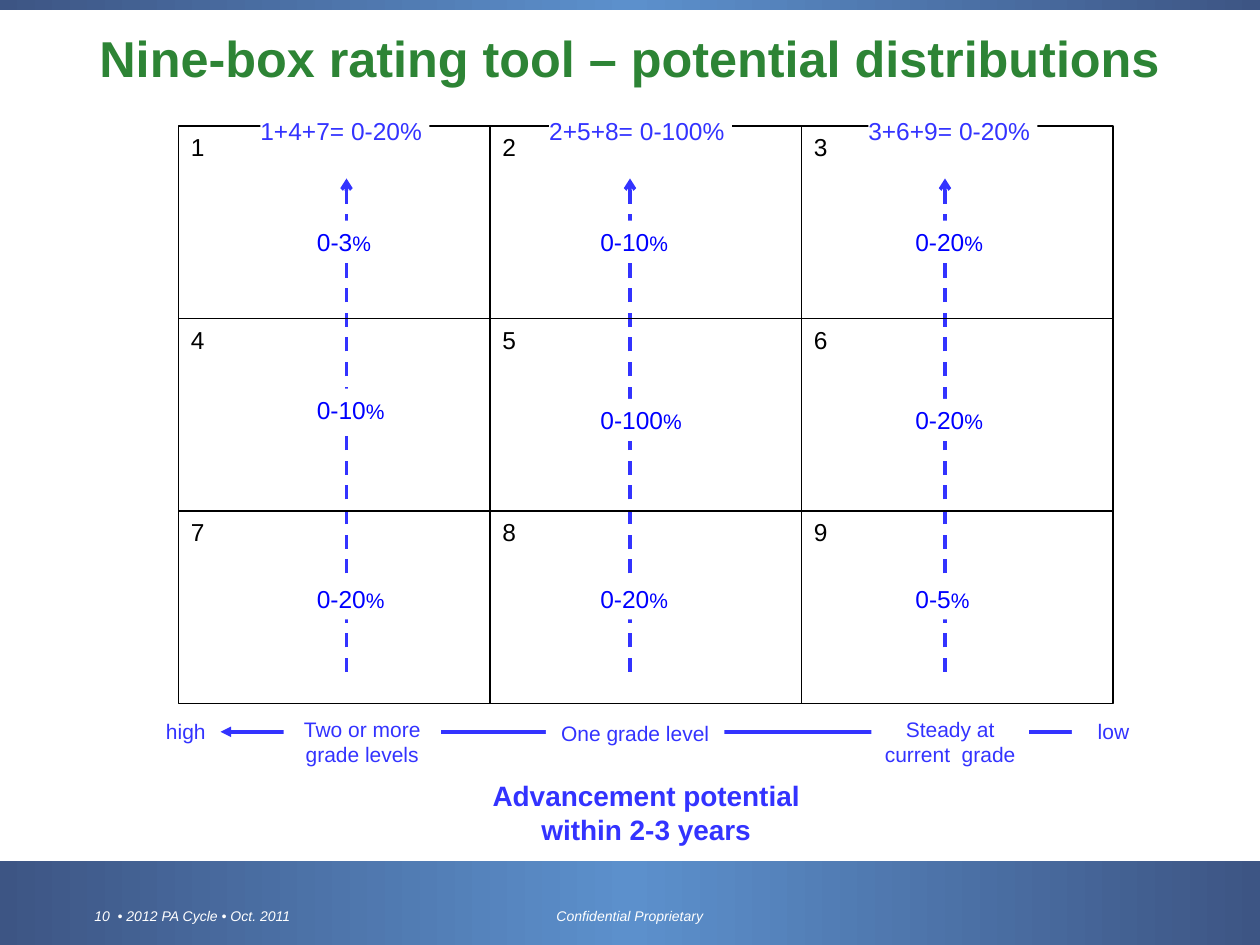
from copy import deepcopy

from pptx import Presentation
from pptx.dml.color import RGBColor
from pptx.enum.dml import MSO_LINE
from pptx.enum.shapes import MSO_CONNECTOR, MSO_SHAPE
from pptx.enum.text import MSO_ANCHOR, MSO_AUTO_SIZE, PP_ALIGN
from pptx.oxml.ns import qn
from pptx.oxml.xmlchemy import OxmlElement
from pptx.util import Inches, Pt

WIDTH, HEIGHT = Inches(10), Inches(7.5)
UNIT = WIDTH / 120
FONT = "Arial"
WHITE = RGBColor(0xFF, 0xFF, 0xFF)
BLACK = RGBColor(0, 0, 0)
GREEN = RGBColor(0x2D, 0x84, 0x35)
INDIGO = RGBColor(0x33, 0x33, 0xFF)
BLUE = RGBColor(0, 0, 0xFF)
BAND_EDGE = RGBColor(0x3D, 0x55, 0x84)
BAND_MIDDLE = RGBColor(0x5C, 0x90, 0xCC)

GRID_LEFT, GRID_TOP = 17, 12
CELL_WIDTH, CELL_HEIGHT = 89 / 3, 55 / 3

SUMS = [
    ("1+4+7= 0-20%", 24.8, 16.1),
    ("2+5+8= 0-100%", 52.3, 17.4),
    ("3+6+9= 0-20%", 82.7, 16.1),
]
COLUMNS = [
    (33, [("0-3", 21), ("0-10", 37), ("0-20", 55)]),
    (60, [("0-10", 21), ("0-100", 38), ("0-20", 55)]),
    (90, [("0-20", 21), ("0-20", 38), ("0-5", 55)]),
]
SCALE = [
    ("One grade level", (52, 68, 17, 3.6), MSO_ANCHOR.MIDDLE),
    ("Steady at current  grade", (83, 67.6, 15, 6), MSO_ANCHOR.MIDDLE),
    ("low", (102.1, 67.8, 7.9, 3.6), MSO_ANCHOR.TOP),
    ("Two or more grade levels", (27, 67.6, 15, 6), MSO_ANCHOR.MIDDLE),
]


def units(*counts):
    """Turn counts of grid units into slide lengths."""
    return [round(count * UNIT) for count in counts]


def add_run(paragraph, text, size, color, bold=False, italic=False):
    """Append one formatted run."""
    run = paragraph.add_run()
    run.text = text
    font = run.font
    font.name, font.size, font.color.rgb = FONT, Pt(size), color
    font.bold, font.italic = bold, italic


def write(shape, text, size=12, color=INDIGO, bold=False, italic=False, suffix="",
          align=PP_ALIGN.CENTER, anchor=MSO_ANCHOR.TOP, wrap=True, inset=None):
    """Fill a shape with one formatted paragraph."""
    frame = shape.text_frame
    frame.auto_size = MSO_AUTO_SIZE.NONE
    frame.word_wrap, frame.vertical_anchor = wrap, anchor
    if inset is not None:
        frame.margin_left = frame.margin_right = inset
        frame.margin_top = frame.margin_bottom = inset
    paragraph = frame.paragraphs[0]
    paragraph.alignment = align
    add_run(paragraph, text, size, color, bold, italic)
    if suffix:
        add_run(paragraph, suffix, 12, color, bold, italic)


def add_box(slide, area, fill=None, outline=None):
    """Add a rectangle with an optional fill and outline."""
    box = slide.shapes.add_shape(MSO_SHAPE.RECTANGLE, *units(*area))
    box.shadow.inherit = False
    if fill is None:
        box.fill.background()
    else:
        box.fill.solid()
        box.fill.fore_color.rgb = fill
    if outline is None:
        box.line.fill.background()
    else:
        box.line.color.rgb, box.line.width = outline, Pt(1)
    return box


def add_caption(slide, area, text, **style):
    """Add a text box without fill."""
    write(slide.shapes.add_textbox(*units(*area)), text, **style)


def add_plate(slide, area, text, **style):
    """Add text on a white rectangle."""
    write(add_box(slide, area, fill=WHITE), text, **style)


def add_band(slide, area):
    """Add a band shaded from dark edges to a light middle."""
    band = add_box(slide, area)
    band.fill.gradient()
    band.fill.gradient_angle = 0
    stops = band._element.spPr.find(qn("a:gradFill")).find(qn("a:gsLst"))
    stops.append(deepcopy(stops[0]))
    shades = [BAND_EDGE, BAND_MIDDLE, BAND_EDGE]
    for index, (stop, shade) in enumerate(zip(band.fill.gradient_stops, shades)):
        stop.position, stop.color.rgb = index / 2, shade


def add_arrow(slide, start, end, head, dash=None):
    """Add a straight arrow pointing at its end."""
    arrow = slide.shapes.add_connector(MSO_CONNECTOR.STRAIGHT, *units(*start, *end))
    arrow.line.color.rgb, arrow.line.width = INDIGO, Pt(2)
    if dash is not None:
        arrow.line.dash_style = dash
    tip = OxmlElement("a:tailEnd")
    tip.set("type", head)
    arrow.line._get_or_add_ln().append(tip)
    arrow._element.spPr.append(OxmlElement("a:effectLst"))


def add_title(slide, text):
    """Place the title in its placeholder."""
    title = slide.shapes.title
    title.left, title.top, title.width, title.height = units(1, 3, 118, 5)
    write(title, text, size=28.8, color=GREEN, bold=True, anchor=MSO_ANCHOR.MIDDLE)


def add_footer(slide):
    """Add the shaded bands and the footer texts."""
    add_band(slide, (0, 82, 120, 8))
    add_band(slide, (0, 0, 120, 1))
    small = {"size": 8, "color": WHITE, "italic": True}
    add_caption(slide, (7.8, 85.8, 31.9, 2.8), "10  • 2012 PA Cycle • Oct. 2011",
                align=PP_ALIGN.LEFT, **small)
    add_caption(slide, (51.8, 85.8, 16.4, 2.8), "Confidential Proprietary", **small)


def add_nine_boxes(slide):
    """Draw the numbered three by three grid."""
    for index in range(9):
        row, column = divmod(index, 3)
        left = GRID_LEFT + column * CELL_WIDTH
        top = GRID_TOP + row * CELL_HEIGHT
        add_box(slide, (left, top, CELL_WIDTH, CELL_HEIGHT), outline=BLACK)
        add_caption(slide, (left, top, 4.9, 3.5), str(index + 1), size=14,
                    color=BLACK, align=PP_ALIGN.LEFT)


def add_distributions(slide):
    """Add the column sums and the share of each box."""
    for text, left, width in SUMS:
        add_plate(slide, (left, 11, width, 2.9), text, size=14, inset=0,
                  align=PP_ALIGN.LEFT, anchor=MSO_ANCHOR.MIDDLE)
    for center, shares in COLUMNS:
        for share, top in shares:
            width = 3.7 + 1.3 * len(share)
            add_plate(slide, (center - 4, top, width, 4), share, suffix="%", size=14,
                      color=BLUE, align=PP_ALIGN.LEFT, wrap=False)


def add_scale(slide):
    """Add the advancement scale below the grid."""
    add_caption(slide, (45, 73.6, 33.1, 7.7), "Advancement potential within 2-3 years",
                size=16, bold=True)
    add_caption(slide, (13, 67.8, 9.4, 3.6), "high")
    add_arrow(slide, (105, 69.7), (21, 69.7), "triangle")
    for text, area, anchor in SCALE:
        add_plate(slide, area, text, anchor=anchor)


def main():
    """Build and save the slide."""
    deck = Presentation()
    deck.slide_width, deck.slide_height = WIDTH, HEIGHT
    slide = deck.slides.add_slide(deck.slide_layouts[5])
    add_footer(slide)
    for center, _ in COLUMNS:
        add_arrow(slide, (center, 64), (center, 17), "arrow", MSO_LINE.DASH)
    add_title(slide, "Nine-box rating tool – potential distributions")
    add_nine_boxes(slide)
    add_distributions(slide)
    add_scale(slide)
    deck.save("out.pptx")


if __name__ == "__main__":
    main()
